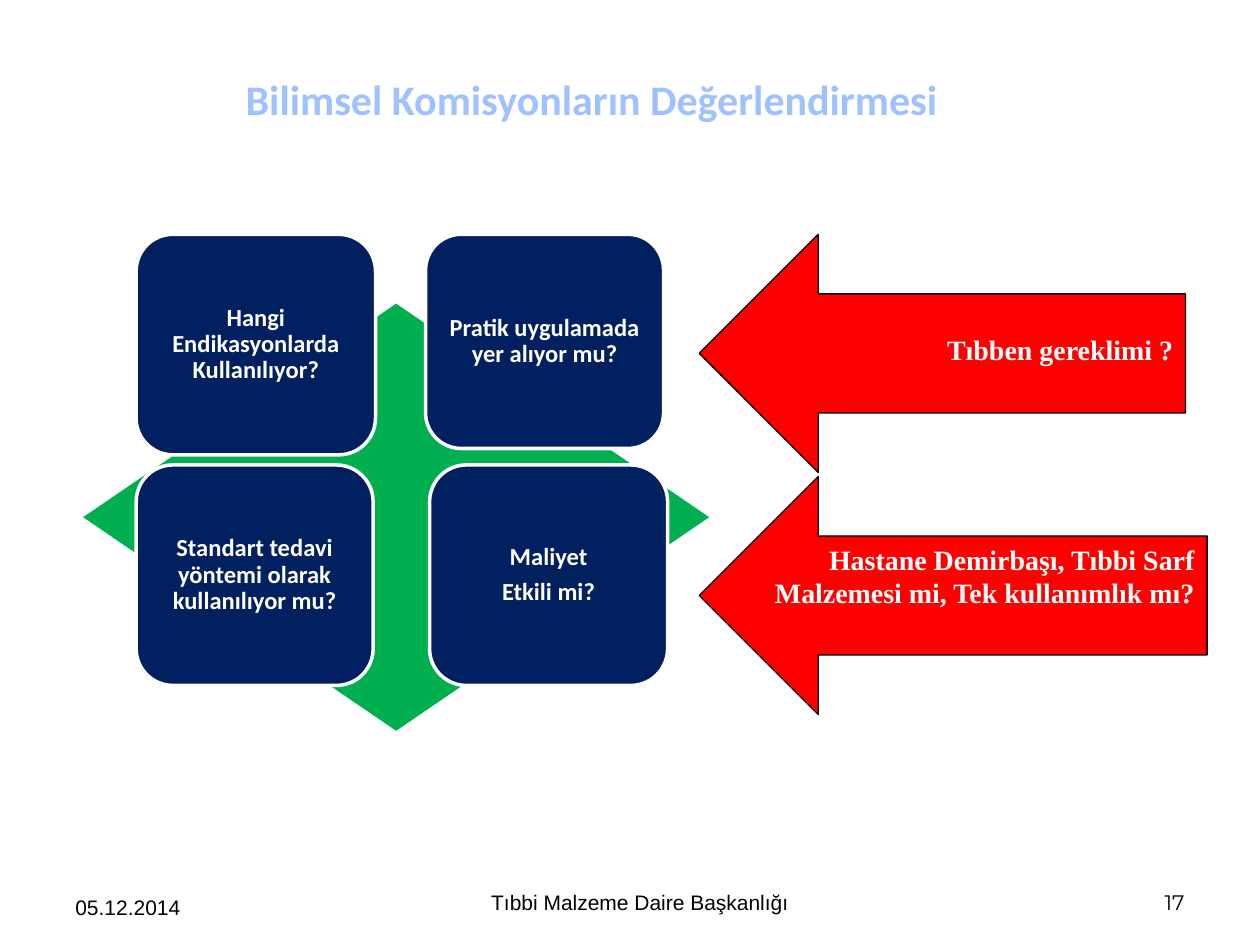
from pptx import Presentation
from pptx.dml.color import RGBColor
from pptx.enum.shapes import MSO_SHAPE
from pptx.enum.text import MSO_ANCHOR, PP_ALIGN
from pptx.util import Pt

COLOURS = {
    "title": "A0C1FF",
    "diamond": "00B050",
    "card": "002060",
    "arrow": "FF0000",
    "white": "FFFFFF",
    "black": "000000",
}
CARDS = [
    ((77.8, 133.9, 136.8, 126), ["Hangi Endikasyonlarda Kullanılıyor?"]),
    ((243.2, 133.9, 136, 122.4), ["Pratik uygulamada yer alıyor mu?"]),
    ((77.8, 265.7, 135.4, 126), ["Standart tedavi yöntemi olarak kullanılıyor mu?"]),
    ((245.5, 265.7, 136, 126), ["Maliyet", "Etkili mi?"]),
]
ARROWS = [
    ((399.6, 133.9, 277.9, 136.1), "Tıbben gereklimi ?", 22),
    ((399.6, 272.2, 290.2, 136.1), "Hastane Demirbaşı, Tıbbi Sarf Malzemesi mi, Tek kullanımlık mı?", 3.6),
]
FOOTERS = [
    ((36, 508.3, 84.2, 20.9), "05.12.2014", "Arial", PP_ALIGN.LEFT, MSO_ANCHOR.BOTTOM),
    ((246.2, 502.6, 239, 25.2), "Tıbbi Malzeme Daire Başkanlığı", "Arial", PP_ALIGN.CENTER, MSO_ANCHOR.MIDDLE),
    ((643.7, 502.6, 40.3, 25.2), "17", "Montserrat", PP_ALIGN.RIGHT, MSO_ANCHOR.MIDDLE),
]


def colour(name):
    return RGBColor.from_string(COLOURS[name])


def points(area):
    return [Pt(length) for length in area]


def write(shape, lines, font, size, shade, align, anchor, bold=True):
    frame = shape.text_frame
    frame.word_wrap = True
    frame.vertical_anchor = anchor
    frame.text = "\n".join(lines)
    for paragraph in frame.paragraphs:
        paragraph.alignment = align
        paragraph.font.name = font
        paragraph.font.size = Pt(size)
        paragraph.font.bold = bold
        paragraph.font.color.rgb = colour(shade)
    return frame


def add_filled(page, kind, area, fill, line=None, width=0):
    shape = page.shapes.add_shape(kind, *points(area))
    shape.shadow.inherit = False
    shape.fill.solid()
    shape.fill.fore_color.rgb = colour(fill)
    if line:
        shape.line.color.rgb = colour(line)
        shape.line.width = Pt(width)
    else:
        shape.line.fill.background()
    return shape


def set_title(page, area, text):
    title = page.shapes.title
    title.left, title.top, title.width, title.height = points(area)
    write(title, [text], "Calibri", 24, "title", PP_ALIGN.LEFT, MSO_ANCHOR.MIDDLE)


def add_card(page, area, lines):
    card = add_filled(page, MSO_SHAPE.ROUNDED_RECTANGLE, area, "card", "white", 2)
    frame = write(card, lines, "Calibri", 14, "white", PP_ALIGN.CENTER, MSO_ANCHOR.MIDDLE)
    frame.margin_left = frame.margin_right = Pt(4.2)
    frame.margin_top = frame.margin_bottom = Pt(4.2)
    for paragraph in frame.paragraphs:
        paragraph.line_spacing = 0.9
        paragraph.space_after = Pt(4.9)


def add_arrow(page, area, text, top_margin):
    arrow = add_filled(page, MSO_SHAPE.LEFT_ARROW, area, "arrow", "black", 0.75)
    frame = write(arrow, [text], "Times New Roman", 16, "white", PP_ALIGN.RIGHT, MSO_ANCHOR.TOP)
    frame.margin_top = Pt(top_margin)


def add_footer(page, area, text, font, align, anchor):
    box = page.shapes.add_textbox(*points(area))
    write(box, [text], font, 12, "black", align, anchor, bold=False)


def main():
    deck = Presentation()
    deck.slide_width, deck.slide_height = Pt(720), Pt(540)
    page = deck.slides.add_slide(deck.slide_layouts[5])
    set_title(page, (133.2, 20.9, 556.6, 71.3), "Bilimsel Komisyonların Değerlendirmesi")
    add_filled(page, MSO_SHAPE.DIAMOND, (47.5, 173.5, 357.8, 244.1), "diamond")
    for card in CARDS:
        add_card(page, *card)
    for arrow in ARROWS:
        add_arrow(page, *arrow)
    for footer in FOOTERS:
        add_footer(page, *footer)
    deck.save("out.pptx")


if __name__ == "__main__":
    main()
